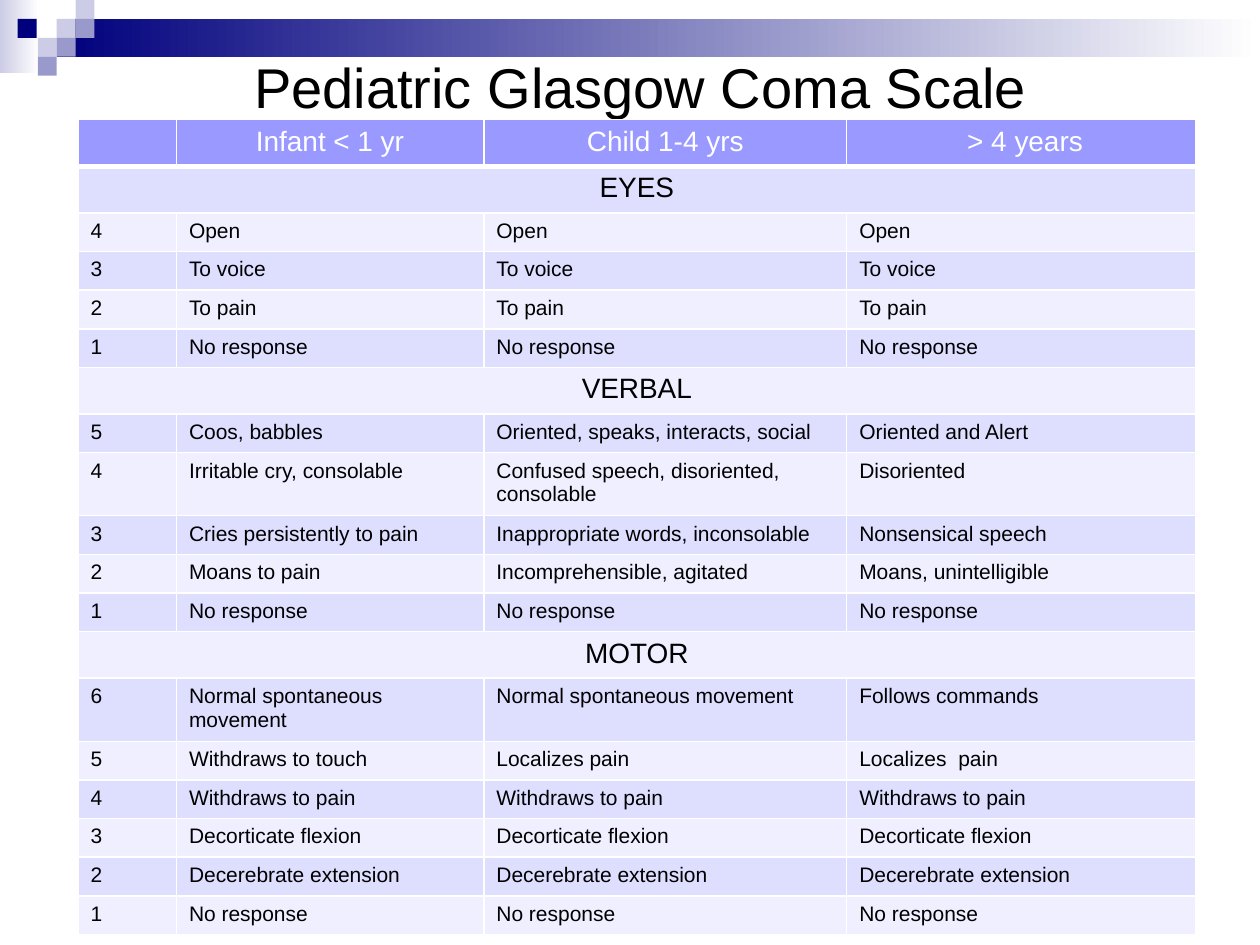
from lxml.etree import SubElement
from pptx import Presentation
from pptx.dml.color import RGBColor
from pptx.enum.shapes import MSO_SHAPE
from pptx.enum.text import MSO_ANCHOR, PP_ALIGN
from pptx.oxml.ns import qn
from pptx.util import Inches, Pt

NAVY = RGBColor(0x00, 0x00, 0x7D)
LAVENDER = RGBColor(0xCC, 0xCC, 0xE6)
PURPLE = RGBColor(0x99, 0x99, 0xCC)
HEADER = RGBColor(0x99, 0x99, 0xFF)
BAND_DARK = RGBColor(0xDE, 0xDE, 0xFF)
BAND_LIGHT = RGBColor(0xEF, 0xEF, 0xFF)
BLACK = RGBColor(0x00, 0x00, 0x00)
WHITE = RGBColor(0xFF, 0xFF, 0xFF)

AGE_GROUPS = ["", "Infant < 1 yr", "Child 1-4 yrs", " > 4 years"]

# Responses run from the highest score down to 1; a lone string holds for all ages
SECTIONS = {
    "EYES": ["Open", "To voice", "To pain", "No response"],
    "VERBAL": [
        ("Coos, babbles", "Oriented, speaks, interacts, social", "Oriented and Alert"),
        ("Irritable cry, consolable", "Confused speech, disoriented, consolable", "Disoriented"),
        ("Cries persistently to pain", "Inappropriate words, inconsolable", "Nonsensical speech"),
        ("Moans to pain", "Incomprehensible, agitated", "Moans, unintelligible"),
        "No response",
    ],
    "MOTOR": [
        ("Normal spontaneous movement", "Normal spontaneous movement", "Follows commands"),
        ("Withdraws to touch", "Localizes pain", "Localizes  pain"),
        "Withdraws to pain",
        "Decorticate flexion",
        "Decerebrate extension",
        "No response",
    ],
}

COLUMN_WIDTHS = [0.78, 2.44, 2.88, 2.77]
TABLE_HEIGHT = 6.47
HEADING_HEIGHT = 0.37
WRAPPED_HEIGHT = 0.5
WRAPPED_ROWS = {8, 13}

SQUARE = 0.15
SQUARES = [
    (0.45, 0.15, LAVENDER),
    (0.6, 0, LAVENDER),
    (0.6, 0.15, PURPLE),
    (0.3, 0.3, LAVENDER),
    (0.14, 0.15, NAVY),
    (0.45, 0.3, PURPLE),
    (0.3, 0.45, PURPLE),
]


class ScaleSlide:
    font_name = "Arial"

    def __init__(self, slide):
        self.slide = slide

    def rectangle(self, left, top, width, height, *colors):
        """One colour gives a solid fill, two give a left-to-right gradient."""
        block = self.slide.shapes.add_shape(
            MSO_SHAPE.RECTANGLE, Inches(left), Inches(top), Inches(width), Inches(height))
        block.shadow.inherit = False
        block.line.fill.background()
        if len(colors) == 1:
            block.fill.solid()
            block.fill.fore_color.rgb = colors[0]
            return
        block.fill.gradient()
        block.fill.gradient_angle = 0
        for position, (stop, color) in enumerate(zip(block.fill.gradient_stops, colors)):
            stop.position = position
            stop.color.rgb = color

    def set_text(self, paragraph, text, size, color, align):
        paragraph.text = text
        paragraph.alignment = align
        paragraph.font.name = self.font_name
        paragraph.font.size = Pt(size)
        paragraph.font.bold = False
        paragraph.font.color.rgb = color

    def title(self, text, left, top, width, height):
        frame = self.slide.shapes.add_textbox(
            Inches(left), Inches(top), Inches(width), Inches(height)).text_frame
        frame.word_wrap = True
        frame.vertical_anchor = MSO_ANCHOR.MIDDLE
        self.set_text(frame.paragraphs[0], text, 32, BLACK, PP_ALIGN.CENTER)

    def border(self, cell, side, points):
        line = SubElement(cell._tc.get_or_add_tcPr(), qn(f"a:{side}"), w=str(Pt(points)))
        fill = SubElement(line, qn("a:solidFill"))
        SubElement(fill, qn("a:srgbClr"), val=str(WHITE))

    def cell(self, cell, text, fill, size=12, color=BLACK, align=PP_ALIGN.LEFT, bottom=1):
        for side, points in (("lnL", 1), ("lnR", 1), ("lnT", 1), ("lnB", bottom)):
            self.border(cell, side, points)
        cell.fill.solid()
        cell.fill.fore_color.rgb = fill
        self.set_text(cell.text_frame.paragraphs[0], text, size, color, align)

    def table(self, rows, left, top):
        table = self.slide.shapes.add_table(
            len(rows), len(COLUMN_WIDTHS), Inches(left), Inches(top),
            Inches(sum(COLUMN_WIDTHS)), Inches(TABLE_HEIGHT)).table
        for column, width in zip(table.columns, COLUMN_WIDTHS):
            column.width = Inches(width)

        # Plain rows share the height left by headings and wrapped rows
        headings = {0} | {i for i, row in enumerate(rows) if len(row) == 1}
        fixed = len(headings) * HEADING_HEIGHT + len(WRAPPED_ROWS) * WRAPPED_HEIGHT
        plain_height = (TABLE_HEIGHT - fixed) / (len(rows) - len(headings) - len(WRAPPED_ROWS))

        for i, row in enumerate(rows):
            height = (HEADING_HEIGHT if i in headings
                      else WRAPPED_HEIGHT if i in WRAPPED_ROWS else plain_height)
            table.rows[i].height = Inches(height)
            band = BAND_DARK if i % 2 else BAND_LIGHT
            if len(row) == 1:
                table.cell(i, 0).merge(table.cell(i, len(COLUMN_WIDTHS) - 1))
            for j, text in enumerate(row):
                if i == 0:
                    self.cell(table.cell(i, j), text, HEADER, 16, WHITE, PP_ALIGN.CENTER, bottom=3)
                elif i in headings:
                    self.cell(table.cell(i, j), text, band, 16, align=PP_ALIGN.CENTER)
                else:
                    self.cell(table.cell(i, j), text, band)


def scale_rows():
    rows = [AGE_GROUPS]
    for section, responses in SECTIONS.items():
        rows.append([section])
        for score, response in zip(range(len(responses), 0, -1), responses):
            by_age = [response] * 3 if isinstance(response, str) else response
            rows.append([str(score), *by_age])
    return rows


def main():
    presentation = Presentation()
    presentation.slide_width = Inches(10)
    presentation.slide_height = Inches(7.5)
    page = ScaleSlide(presentation.slides.add_slide(presentation.slide_layouts[6]))

    # Banner: gradient bars and the stepped squares
    page.rectangle(0, 0, 0.31, 0.58, LAVENDER, WHITE)
    page.rectangle(0.45, 0.15, 9.55, 0.3, NAVY, WHITE)
    for left, top, color in SQUARES:
        page.rectangle(left, top, SQUARE, SQUARE, color)

    # Title and scoring table
    page.title("Pediatric Glasgow Coma Scale", 0.42, 0.33, 9.33, 0.7)
    page.table(scale_rows(), 0.62, 0.95)

    presentation.save("out.pptx")


if __name__ == "__main__":
    main()
